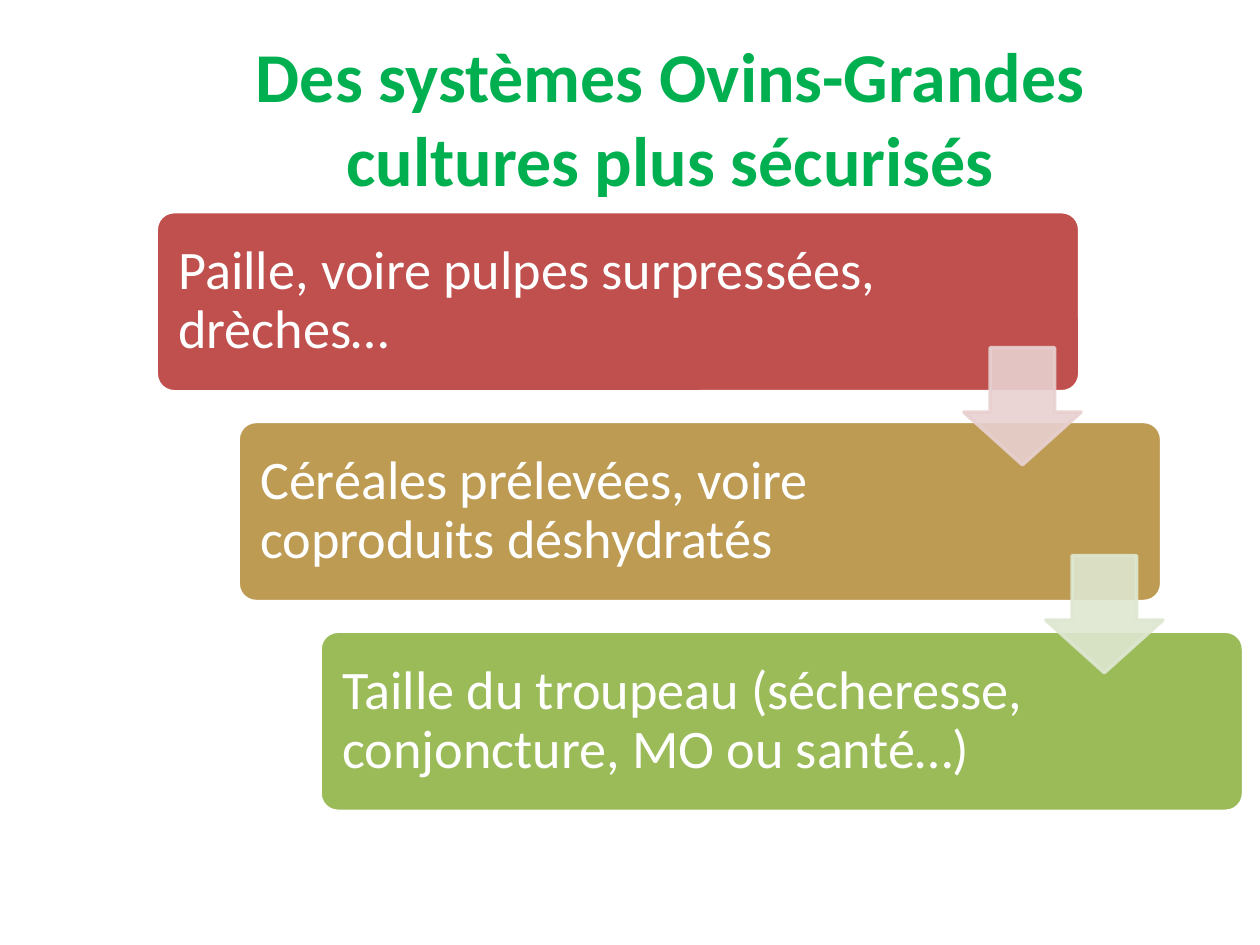
from pptx import Presentation
from pptx.dml.color import RGBColor
from pptx.enum.shapes import MSO_SHAPE
from pptx.enum.text import MSO_ANCHOR, PP_ALIGN
from pptx.oxml.ns import qn
from pptx.util import Inches, Pt
from lxml.etree import SubElement

TITLE = "Des systèmes Ovins-Grandes cultures plus sécurisés"
# text, fill, text width
STEPS = [
    ("Paille, voire pulpes surpressées, drèches…", "C0504D", 5.79),
    ("Céréales prélevées, voire coproduits déshydratés", "BD9B53", 5.67),
    ("Taille du troupeau (sécheresse, conjoncture, MO ou santé…)", "9BBB59", 5.67),
]
ARROW_COLORS = ["E8D0D0", "DEE7D1"]

THEME = dict(font="Calibri", title="00B050", text="FFFFFF", outline="FFFFFF",
             title_size=40, step_size=31, line_width=2, arrow_alpha=90)

LEFT, TOP, WIDTH, HEIGHT = 1.24, 1.68, 7.33, 1.43
STEP_X, STEP_Y = 0.65, 1.665
PAD, INSET = 0.045, 0.13
ARROW_LEFT, ARROW_TOP, ARROW_SIZE, ARROW_STEP_Y = 7.65, 2.76, 0.93, 1.65


def set_text(tf, text, size, color, bold=False, align=PP_ALIGN.LEFT,
             spacing=None, inset=None):
    tf.word_wrap = True
    tf.vertical_anchor = MSO_ANCHOR.MIDDLE
    if inset is not None:
        tf.margin_left = tf.margin_right = Inches(inset)
        tf.margin_top = tf.margin_bottom = Inches(inset)
    p = tf.paragraphs[0]
    p.alignment = align
    if spacing:
        p.line_spacing = spacing
    r = p.add_run()
    r.text = text
    r.font.name = THEME["font"]
    r.font.size = Pt(size)
    r.font.bold = bold
    r.font.color.rgb = RGBColor.from_string(color)


def add_shape(s, kind, box, adjustments, fill, line, alpha=None):
    """Add a preset shape; alpha is the opacity in percent of fill and line."""
    sp = s.shapes.add_shape(kind, *map(Inches, box))
    sp.shadow.inherit = False
    for i, value in enumerate(adjustments):
        sp.adjustments[i] = value
    sp.fill.solid()
    sp.fill.fore_color.rgb = RGBColor.from_string(fill)
    sp.line.color.rgb = RGBColor.from_string(line)
    sp.line.width = Pt(THEME["line_width"])
    if alpha is not None:
        for clr in sp._element.spPr.iter(qn("a:srgbClr")):
            SubElement(clr, qn("a:alpha")).set("val", str(alpha * 1000))


def main():
    prs = Presentation()
    prs.slide_width, prs.slide_height = Inches(10), Inches(7.5)
    s = prs.slides.add_slide(prs.slide_layouts[5])

    title = s.shapes.title
    title.left, title.top = Inches(1.14), Inches(0.3)
    title.width, title.height = Inches(8.36), Inches(1.25)
    set_text(title.text_frame, TITLE, THEME["title_size"], THEME["title"],
             bold=True, align=PP_ALIGN.CENTER)

    for i, (text, fill, text_width) in enumerate(STEPS):
        x, y = LEFT + i * STEP_X, TOP + i * STEP_Y
        add_shape(s, MSO_SHAPE.ROUNDED_RECTANGLE, (x, y, WIDTH, HEIGHT), [0.1],
                  fill, THEME["outline"])
        box = (x + PAD, y + PAD, text_width, HEIGHT - 2 * PAD)
        tb = s.shapes.add_textbox(*map(Inches, box))
        set_text(tb.text_frame, text, THEME["step_size"], THEME["text"],
                 spacing=0.9, inset=INSET)

    for i, color in enumerate(ARROW_COLORS):
        box = (ARROW_LEFT + i * STEP_X, ARROW_TOP + i * ARROW_STEP_Y,
               ARROW_SIZE, ARROW_SIZE)
        # adjustments: head length, then shaft width
        add_shape(s, MSO_SHAPE.DOWN_ARROW, box, [0.55, 0.45], color, color,
                  alpha=THEME["arrow_alpha"])

    prs.save("out.pptx")


if __name__ == "__main__":
    main()
